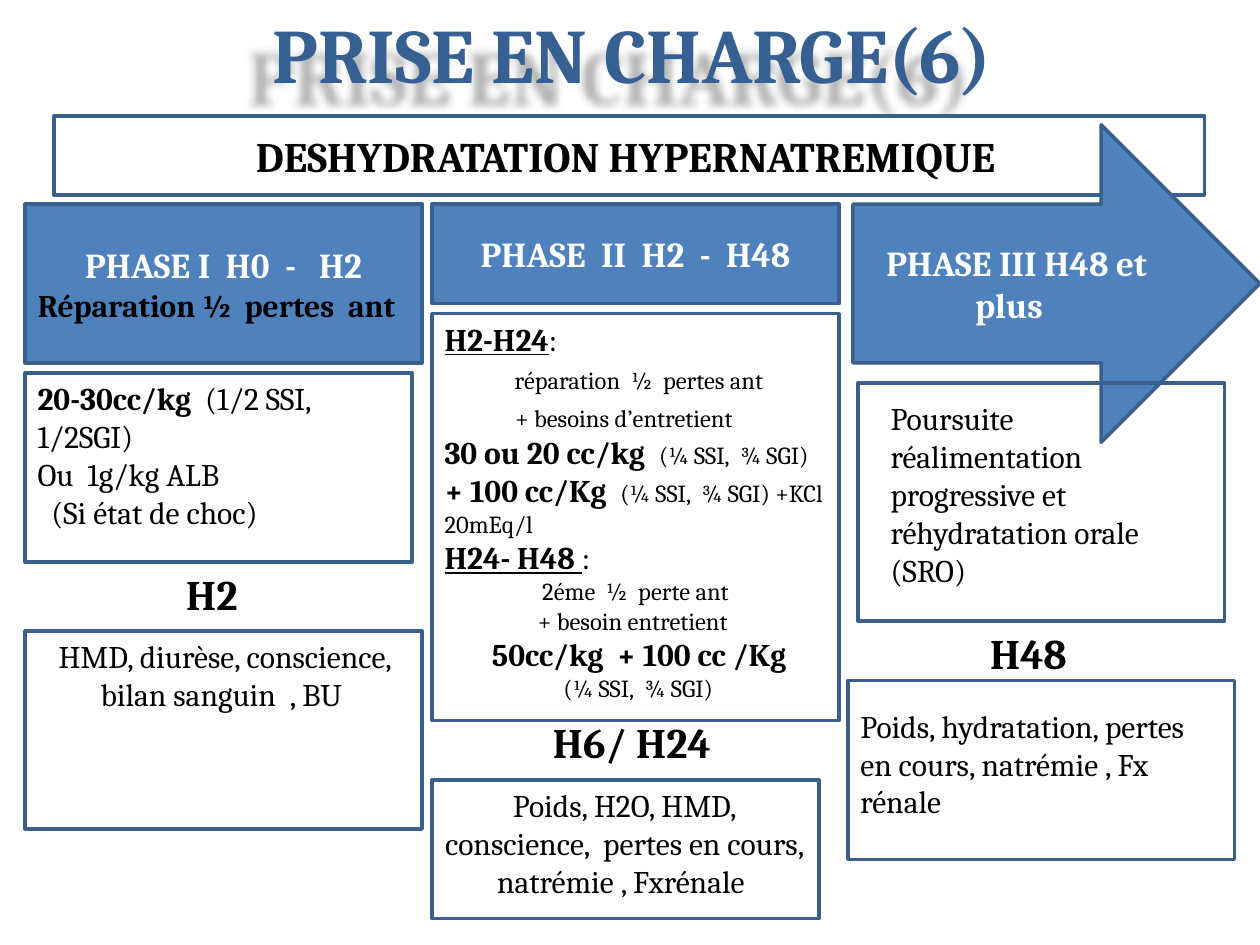
from dataclasses import dataclass

from lxml import etree
from pptx import Presentation
from pptx.dml.color import RGBColor
from pptx.enum import shapes, text
from pptx.oxml.ns import qn
from pptx.util import Inches, Pt

HUE = {"blue": "4F81BD", "edge": "3A5F8C", "title": "376092",
       "white": "FFFFFF", "black": "000000"}
FONT = "Cambria"
LEFT, MID = text.PP_ALIGN.LEFT, text.PP_ALIGN.CENTER
RECT = shapes.MSO_SHAPE.RECTANGLE
ARROW = shapes.MSO_SHAPE.RIGHT_ARROW


@dataclass
class Run:
    words: str
    size: int = 18
    bold: bool = False
    line: bool = False
    hue: str = "black"


@dataclass
class Para:
    runs: list[Run]
    align: text.PP_ALIGN = MID


@dataclass
class Box:
    x: float
    y: float
    w: float
    h: float


@dataclass
class Panel:
    box: Box
    paras: list[Para]
    fill: str | None = None
    form: shapes.MSO_SHAPE = RECT


@dataclass
class Note:
    box: Box
    paras: list[Para]
    grow: bool = True


def place(box: Box) -> list[int]:
    return [Inches(n) for n in (box.x, box.y, box.w, box.h)]


def tint(name: str) -> RGBColor:
    return RGBColor.from_string(HUE[name])


def write(frame, paras: list[Para]) -> None:
    for i, para in enumerate(paras):
        p = frame.paragraphs[0] if i == 0 else frame.add_paragraph()
        p.alignment = para.align
        for run in para.runs:
            r = p.add_run()
            r.text = run.words
            font = r.font
            font.name, font.size = FONT, Pt(run.size)
            font.bold, font.underline = run.bold, run.line
            font.color.rgb = tint(run.hue)


def draw_panel(slide, panel: Panel) -> None:
    shape = slide.shapes.add_shape(panel.form, *place(panel.box))
    shape.shadow.inherit = False
    if panel.fill:
        shape.fill.solid()
        shape.fill.fore_color.rgb = tint(panel.fill)
    else:
        shape.fill.background()
    shape.line.color.rgb = tint("edge")
    shape.line.width = Pt(2)
    frame = shape.text_frame
    frame.word_wrap = True
    frame.vertical_anchor = text.MSO_ANCHOR.MIDDLE
    write(frame, panel.paras)


def draw_note(slide, note: Note):
    shape = slide.shapes.add_textbox(*place(note.box))
    frame = shape.text_frame
    frame.word_wrap = True
    if note.grow:
        frame.auto_size = text.MSO_AUTO_SIZE.SHAPE_TO_FIT_TEXT
    write(frame, note.paras)
    return shape


def cast(shape) -> None:
    """Soft shadow, down and to the left of the letters."""
    fx = etree.SubElement(shape.element.spPr, qn("a:effectLst"))
    soft = etree.SubElement(fx, qn("a:outerShdw"), blurRad="60000",
                            dist="240000", dir="8400000", algn="tl")
    ink = etree.SubElement(soft, qn("a:srgbClr"), val=HUE["black"])
    etree.SubElement(ink, qn("a:alpha"), val="30000")


def head(words: str, size: int = 20, hue: str = "white") -> Para:
    return Para([Run(words, size, True, hue=hue)])


def plain(words: str, align=MID, size: int = 18) -> Para:
    return Para([Run(words, size)], align)


# Columns
X1, X2, X3 = 0.2, 3.43, 6.73
WIDE = 3.07

# Title, banner and phase headings
TITLE = Note(Box(0.59, 0, 9, 1.25),
             [head("PRISE EN CHARGE(6) ", 44, "title")], grow=False)
PANELS = [
    Panel(Box(0.43, 0.92, 9.13, 0.63),
          [Para([Run("DESHYDRATATION HYPERNATREMIQUE", 24, True),
                 Run(" ", 20, True)])], "white"),
    Panel(Box(6.77, 0.99, 3.23, 2.52), [head("PHASE III H48 et plus  ")],
          "blue", ARROW),
    Panel(Box(X2, 1.62, 3.23, 0.79), [head("PHASE  II  H2  -  H48")], "blue"),
    Panel(Box(X1, 1.62, 3.15, 1.26),
          [head("PHASE I  H0  -   H2"),
           head("Réparation ½  pertes  ant  ", 18, "black")], "blue"),
]

# Empty frames behind the notes
FRAMES = [
    Box(X1, 2.96, WIDE, 1.5), Box(X2, 2.49, 3.23, 3.23),
    Box(6.81, 3.04, 2.91, 1.89), Box(X1, 5.01, 3.15, 1.57),
    Box(X2, 6.19, WIDE, 1.1), Box(X3, 5.4, WIDE, 1.42),
]
PANELS += [Panel(box, []) for box in FRAMES]

# Treatment in each phase
CARE = [
    Para([Run("H2-H24", bold=True, line=True), Run(":")], LEFT),
    Para([Run(" "), Run("réparation  ½  pertes ant", 14)]),
    Para([Run("+ besoins d’entretient   ", 14), Run(" ")]),
    Para([Run("30 ou 20 cc/kg  ", bold=True),
          Run("(¼ SSI,  ¾ SGI)", 14)], LEFT),
    Para([Run("+ 100 cc/Kg  ", bold=True),
          Run("(¼ SSI,  ¾ SGI) +KCl 20mEq/l", 14)], LEFT),
    Para([Run("H24- H48 ", bold=True, line=True), Run(":")], LEFT),
    plain("2éme  ½  perte ant", size=14),
    plain(" + besoin entretient  ", size=14),
    Para([Run(" "), Run("50cc/kg  + 100 cc /Kg", bold=True)]),
    plain(" (¼ SSI,  ¾ SGI)", size=14),
]
SHOCK = [
    Para([Run("20-30cc/kg  ", bold=True), Run("(1/2 SSI, 1/2SGI)")], LEFT),
    plain("Ou  1g/kg ALB", LEFT),
    plain("  (Si état de choc)", LEFT),
]
NOTES = [
    Note(Box(X2, 2.49, 3.23, 3.23), CARE),
    Note(Box(6.97, 3.12, 2.74, 1.62),
         [plain("Poursuite réalimentation progressive et "
                "réhydratation orale (SRO)", LEFT)]),
    Note(Box(X1, 2.96, WIDE, 1.31), SHOCK),
    # Checks to make
    Note(Box(X1, 5.01, 3.17, 1.01),
         [plain("HMD, diurèse, conscience, bilan sanguin  , BU ")]),
    Note(Box(X2, 6.19, 3.05, 1.01),
         [plain("Poids, H2O, HMD, conscience,  pertes en cours, "
                "natrémie , Fxrénale ")]),
    Note(Box(X3, 5.56, 3.05, 1.01),
         [plain("Poids, hydratation, pertes en cours, "
                "natrémie , Fx rénale", LEFT)]),
]

# Hour marks, wide enough for one line each
MARKS = [("H2", Box(1.38, 4.46, 0.7, 0.5)),
         ("H6/ H24", Box(4.29, 5.64, 1.6, 0.5)),
         ("H48", Box(7.76, 4.93, 0.9, 0.5))]
NOTES += [Note(box, [Para([Run(words, 24, True)], LEFT)])
          for words, box in MARKS]


def main() -> None:
    deck = Presentation()
    deck.slide_width, deck.slide_height = Inches(10), Inches(7.5)
    slide = deck.slides.add_slide(deck.slide_layouts[6])
    cast(draw_note(slide, TITLE))
    for panel in PANELS:
        draw_panel(slide, panel)
    for note in NOTES:
        draw_note(slide, note)
    deck.save("out.pptx")


if __name__ == "__main__":
    main()
